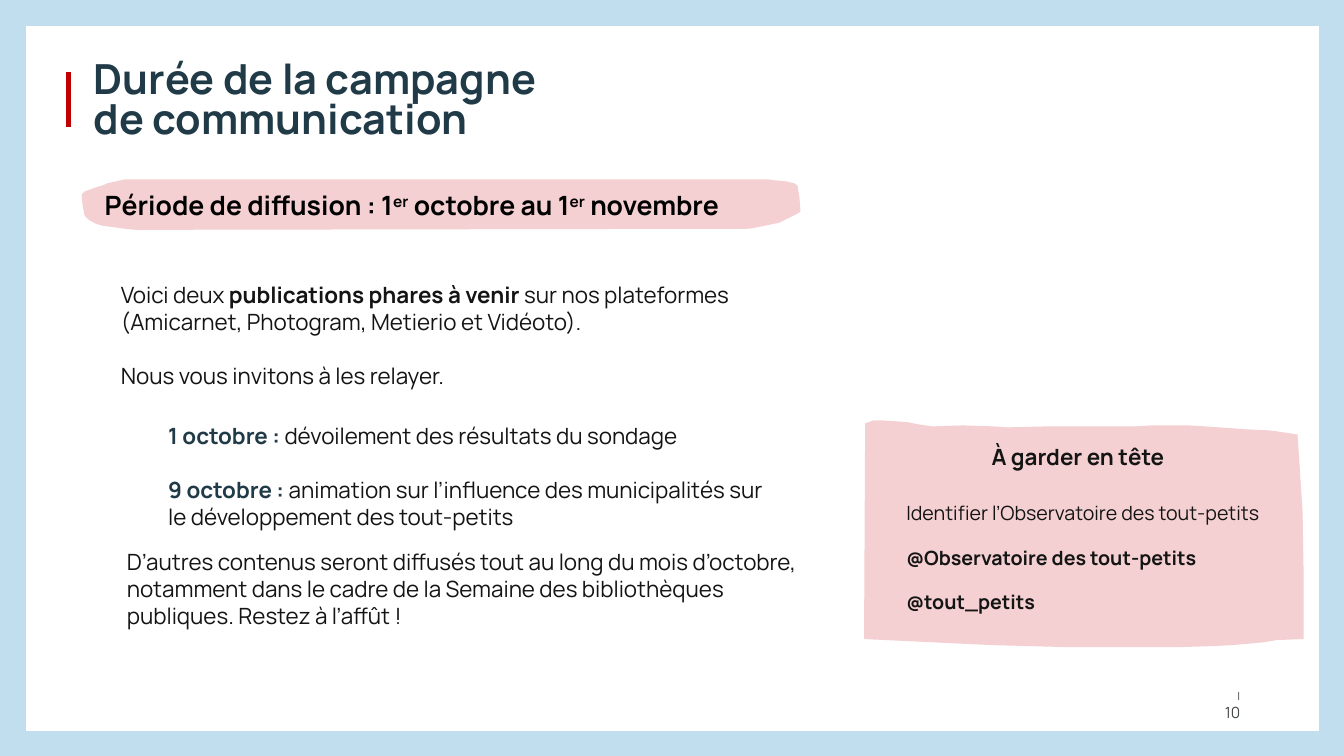
import pptx
import pptx.util
import pptx.dml.color
import pptx.enum.shapes
import pptx.enum.text
import pptx.oxml.ns
import lxml.etree

Inches = pptx.util.Inches
Pt = pptx.util.Pt
RGBColor = pptx.dml.color.RGBColor
ALIGN = pptx.enum.text.PP_ALIGN

SKY = RGBColor(0xC1, 0xDE, 0xEE)
WHITE = RGBColor(0xFF, 0xFF, 0xFF)
NAVY = RGBColor(0x20, 0x3B, 0x47)
RED = RGBColor(0xC0, 0x00, 0x00)
PINK = RGBColor(0xF5, 0xD0, 0xD2)
BLACK = RGBColor(0x00, 0x00, 0x00)
INK = RGBColor(0x13, 0x14, 0x13)
GREY = RGBColor(0x43, 0x47, 0x47)

presentation = pptx.Presentation()
presentation.slide_width = Inches(13.33)
presentation.slide_height = Inches(7.5)
slide = presentation.slides.add_slide(presentation.slide_layouts[6])
slide.background.fill.solid()
slide.background.fill.fore_color.rgb = SKY


def add_brush(points):
    corners = [(Inches(x), Inches(y)) for x, y in points]
    builder = slide.shapes.build_freeform(*corners[0])
    builder.add_line_segments(corners[1:], close=True)
    brush = builder.convert_to_shape()
    brush.shadow.inherit = False
    brush.fill.solid()
    brush.fill.fore_color.rgb = PINK
    brush.line.fill.background()


def add_text(box, paragraphs, size, color=INK, spacing=None, before=0, after=0, align=ALIGN.LEFT):
    frame = slide.shapes.add_textbox(*map(Inches, box)).text_frame
    frame.word_wrap = True
    for index, pieces in enumerate(paragraphs):
        paragraph = frame.paragraphs[0] if index == 0 else frame.add_paragraph()
        paragraph.alignment = align
        paragraph.line_spacing = spacing
        paragraph.space_before = Pt(before if index else 0)
        paragraph.space_after = Pt(after)
        for text, bold, *accent in pieces:
            run = paragraph.add_run()
            run.text = text
            run.font.name = "Manrope"
            run.font.size = Pt(size)
            run.font.bold = bold
            run.font.color.rgb = accent[0] if accent else color
    return frame


page = slide.shapes.add_shape(
    pptx.enum.shapes.MSO_SHAPE.RECTANGLE,
    Inches(0.26), Inches(0.26), Inches(12.82), Inches(6.99))
page.shadow.inherit = False
page.fill.solid()
page.fill.fore_color.rgb = WHITE
page.line.fill.background()

title = add_text(
    (0.83, 0.5, 8.62, 0.96),
    [[("Durée de la campagne", True)], [("de communication", True)]],
    29.6, NAVY, spacing=0.8)
title.vertical_anchor = pptx.enum.text.MSO_ANCHOR.BOTTOM

title_bar = slide.shapes.add_connector(
    pptx.enum.shapes.MSO_CONNECTOR.STRAIGHT,
    Inches(0.68), Inches(0.71), Inches(0.68), Inches(1.26))
title_bar.line.color.rgb = RED
title_bar.line.width = Pt(4)
lxml.etree.SubElement(title_bar._element.spPr, pptx.oxml.ns.qn("a:effectLst"))

page_number = add_text(
    (12.01, 6.79, 0.39, 0.29), [[("|", False)], [("10", False)]],
    8, GREY, align=ALIGN.RIGHT)
page_number.word_wrap = False
page_number.paragraphs[1].runs[0].font.size = Pt(11)

add_brush([
    (8.58, 4.2), (8.64, 4.18), (8.66, 4.17), (8.74, 4.17), (8.89, 4.18), (9.01, 4.19),
    (9.11, 4.21), (9.25, 4.23), (9.55, 4.22), (9.86, 4.23), (9.99, 4.24), (10.39, 4.23),
    (11.25, 4.23), (11.43, 4.22), (11.79, 4.22), (11.95, 4.23), (12.24, 4.25),
    (12.37, 4.26), (12.59, 4.27), (12.67, 4.28), (12.87, 4.31), (12.92, 5.08),
    (12.93, 5.69), (12.93, 6.34), (12.66, 6.35), (12.55, 6.37), (12.45, 6.38),
    (12.22, 6.4), (12.02, 6.41), (11.69, 6.42), (10.59, 6.42), (9.84, 6.4),
    (8.57, 6.34), (8.58, 4.42)])

add_brush([
    (7.73, 2.21), (7.91, 2.12), (7.94, 2.1), (7.93, 1.96), (7.91, 1.84), (7.88, 1.82),
    (7.8, 1.8), (7.69, 1.79), (7.62, 1.78), (7.52, 1.78), (1.24, 1.78), (1.06, 1.82),
    (1.02, 1.84), (0.95, 1.86), (0.84, 1.9), (0.81, 1.93), (0.82, 2.04), (0.84, 2.14),
    (0.88, 2.18), (0.95, 2.22), (1.02, 2.24), (1.24, 2.27), (1.34, 2.28), (1.77, 2.28),
    (7.44, 2.27)])

period = add_text(
    (0.94, 1.83, 7.01, 0.41),
    [[(piece, True) for piece in
      ("Période de diffusion : 1", "er", " octobre au 1", "er", " novembre")]],
    19, BLACK, spacing=Pt(22.2), after=18)
for ordinal in period.paragraphs[0].runs[1::2]:
    ordinal.font._element.set("baseline", "30000")

add_text(
    (8.83, 4.29, 3.72, 0.41), [[("À garder en tête", True)]],
    16, spacing=Pt(23.6), after=4, align=ALIGN.CENTER)

add_text(
    (8.89, 4.83, 3.72, 1.3),
    [[("Identifier l’Observatoire des tout-petits", False)],
     [("@Observatoire des tout-petits", True)],
     [("@tout_petits", True)]],
    14, spacing=Pt(23.6), before=4, after=4)

add_text(
    (1.57, 4.14, 6.11, 1.18),
    [[("1 octobre : ", True, NAVY), ("dévoilement des résultats du sondage", False)],
     [("9 octobre : ", True, NAVY),
      ("animation sur l’influence des municipalités sur le développement des tout-petits", False)]],
    16, before=19.2)

add_text(
    (1.1, 2.74, 6.92, 1.18),
    [[("Voici deux ", False), ("publications phares à venir ", True),
      ("sur nos plateformes (Amicarnet, Photogram, Metierio et Vidéoto).", False)],
     [("Nous vous invitons à les relayer.", False)]],
    16, before=19.2)

add_text(
    (1.16, 5.39, 6.92, 0.91),
    [[("D’autres contenus seront diffusés tout au long du mois d’octobre, notamment dans "
       "le cadre de la Semaine des bibliothèques publiques. Restez à l’affût !", False)]],
    16)

presentation.save("out.pptx")
